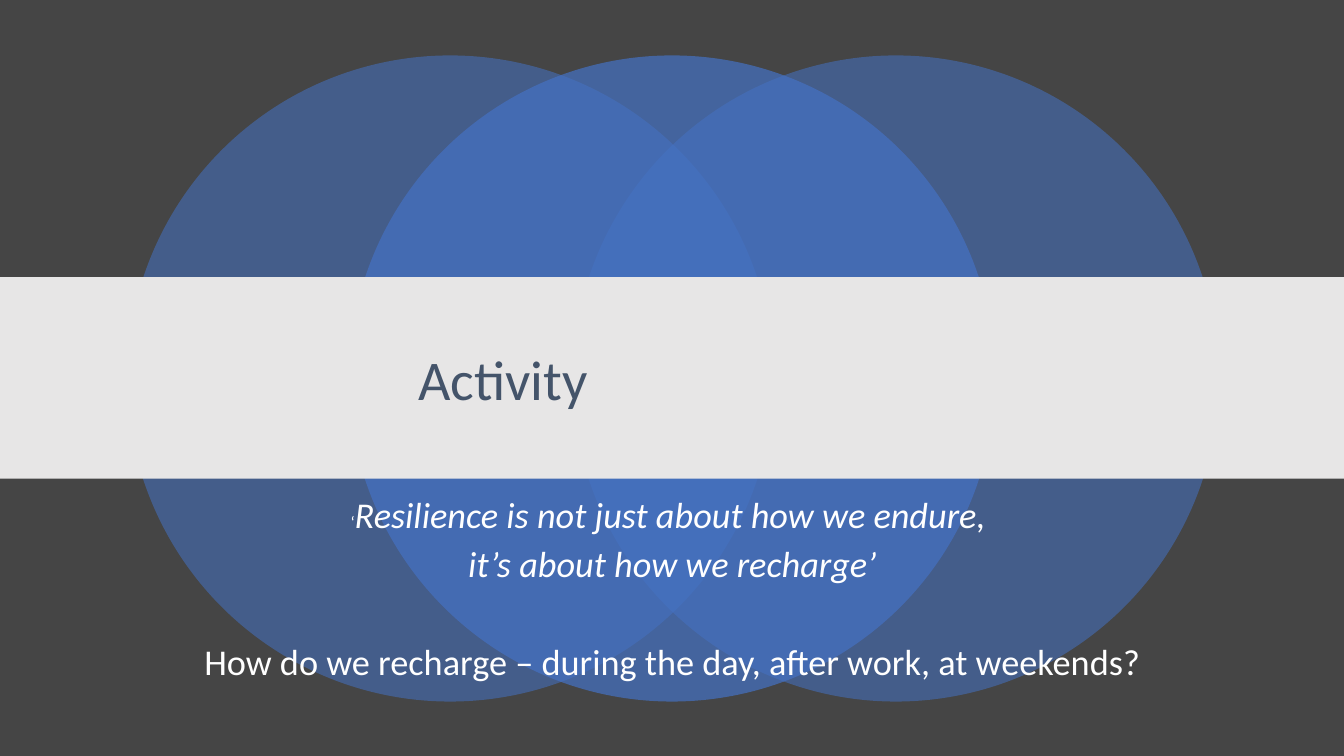
import pptx
import pptx.dml.color
import pptx.enum.shapes
import pptx.enum.text
import pptx.oxml.ns
import pptx.util
from lxml import etree
from pptx.util import Inches

SHAPES = pptx.enum.shapes.MSO_SHAPE
ANCHOR = pptx.enum.text.MSO_ANCHOR
CENTER = pptx.enum.text.PP_ALIGN.CENTER


def color(hex_code):
    return pptx.dml.color.RGBColor.from_string(hex_code)


class ActivitySlide:
    font = "Calibri"
    background = "454545"
    blue = "4472C4"
    band_gray = "E7E6E6"
    title_blue = "44546A"
    white = "FFFFFF"

    def __init__(self, deck):
        self.slide = deck.slides.add_slide(deck.slide_layouts[5])
        fill = self.slide.background.fill
        fill.solid()
        fill.fore_color.rgb = color(self.background)

    def add_filled(self, shapes, kind, left, top, width, height, hex_code, opacity=100):
        """Add a borderless shape with the given opacity in percent."""
        shape = shapes.add_shape(
            kind, Inches(left), Inches(top), Inches(width), Inches(height)
        )
        shape.shadow.inherit = False
        shape.line.fill.background()
        shape.fill.solid()
        shape.fill.fore_color.rgb = color(hex_code)
        if opacity < 100:
            tint = shape.element.spPr.find(".//" + pptx.oxml.ns.qn("a:srgbClr"))
            alpha = etree.SubElement(tint, pptx.oxml.ns.qn("a:alpha"))
            alpha.set("val", str(opacity * 1000))

    def add_circles(self, circles, top, diameter):
        group = self.slide.shapes.add_group_shape()
        for left, opacity in circles:
            self.add_filled(group.shapes, SHAPES.OVAL, left, top,
                            diameter, diameter, self.blue, opacity)

    def add_band(self, top, width, height):
        self.add_filled(self.slide.shapes, SHAPES.RECTANGLE, 0, top,
                        width, height, self.band_gray)

    def format_span(self, span, size, hex_code, italic=False):
        span.font.name = self.font
        span.font.size = pptx.util.Pt(size)
        span.font.color.rgb = color(hex_code)
        span.font.italic = italic

    def add_quote(self, left, top, width, height, lines):
        """Add centred lines, each a list of (text, size, italic) and a space before."""
        box = self.slide.shapes.add_textbox(
            Inches(left), Inches(top), Inches(width), Inches(height)
        )
        frame = box.text_frame
        frame.word_wrap = True
        frame.vertical_anchor = ANCHOR.TOP
        for index, (spans, space_before) in enumerate(lines):
            para = frame.add_paragraph() if index else frame.paragraphs[0]
            para.alignment = CENTER
            para.line_spacing = 0.8
            para.space_before = pptx.util.Pt(space_before)
            for text, size, italic in spans:
                span = para.add_run()
                span.text = text
                self.format_span(span, size, self.white, italic)

    def set_title(self, text, left, top, width, height, right_inset):
        title = self.slide.shapes.title
        title.left, title.top = Inches(left), Inches(top)
        title.width, title.height = Inches(width), Inches(height)
        frame = title.text_frame
        frame.text = text
        frame.word_wrap = True
        frame.auto_size = pptx.enum.text.MSO_AUTO_SIZE.NONE
        frame.vertical_anchor = ANCHOR.MIDDLE
        frame.margin_right = Inches(right_inset)
        para = frame.paragraphs[0]
        para.alignment = CENTER
        para.line_spacing = 0.9
        self.format_span(para.runs[0], 40, self.title_blue)
        # The title sits in front of the band.
        title.element.getparent().append(title.element)


def main():
    deck = pptx.Presentation()
    deck.slide_width, deck.slide_height = Inches(13.33), Inches(7.5)
    activity = ActivitySlide(deck)
    activity.add_circles([(1.26, 55), (5.68, 55), (3.46, 70)], top=0.55, diameter=6.41)
    activity.add_quote(1.67, 4.92, 10, 2, [
        ([("‘", 12, False), ("Resilience is not just about how we endure, ", 25.9, True)], 10),
        ([("it’s about how we recharge’", 25.9, True)], 10),
        ([("How do we recharge – during the day, after work, at weekends?", 25.9, False)], 45),
    ])
    activity.add_band(top=2.75, width=13.33, height=2)
    activity.set_title("Activity", 1.67, 3.04, 10, 1.51, right_inset=3.46)
    deck.save("out.pptx")


if __name__ == "__main__":
    main()
